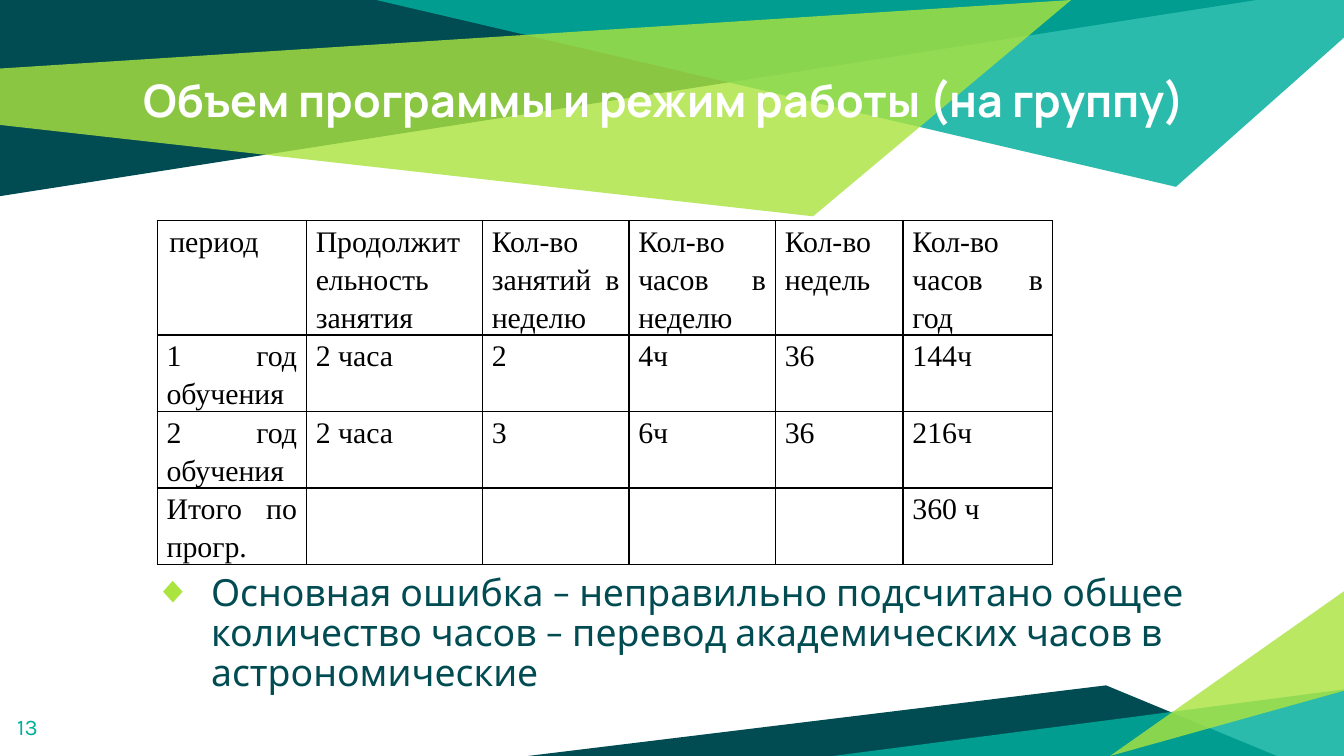
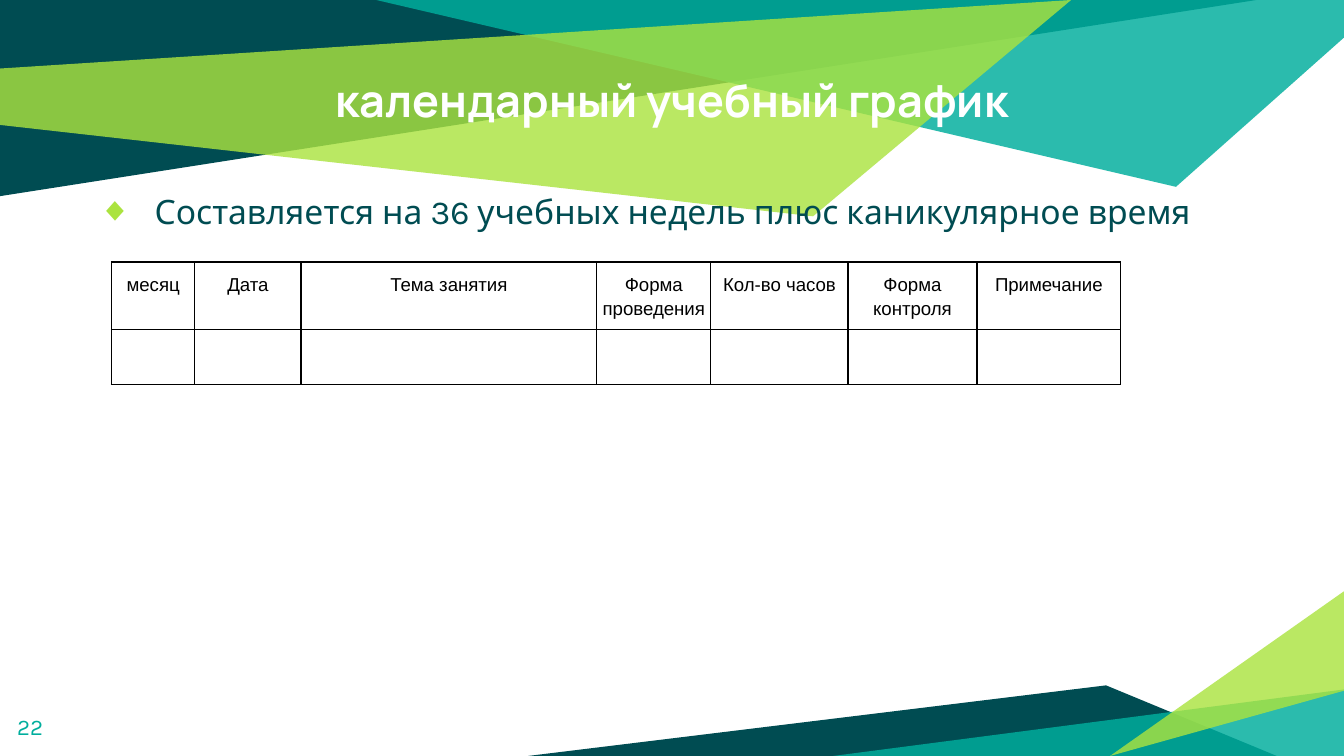
from dataclasses import dataclass

from lxml import etree
from pptx import Presentation
from pptx.dml.color import RGBColor
from pptx.enum.text import MSO_ANCHOR, MSO_AUTO_SIZE, PP_ALIGN
from pptx.oxml.ns import qn
from pptx.util import Inches, Pt

LEFT, CENTER, JUSTIFY = PP_ALIGN.LEFT, PP_ALIGN.CENTER, PP_ALIGN.JUSTIFY
TOP, MIDDLE = MSO_ANCHOR.TOP, MSO_ANCHOR.MIDDLE
NO_AUTOFIT = MSO_AUTO_SIZE.NONE


@dataclass(frozen=True)
class Theme:
    dark: str = "004C52"
    teal: str = "00AE9D"
    lime: str = "ABE33F"
    white: str = "FFFFFF"
    black: str = "000000"
    title_font: str = "Manrope"
    body_font: str = "Karla"
    title_size: int = 24
    number_size: int = 12
    grid_line: float = 0.75
    grid_spacing: float = 1.15


THEME = Theme()
WIDTH, HEIGHT = 10, 10 * 9 / 16

# Shared bands: colour, opacity in percent, corners in inches
BANDS = [
    (THEME.dark, 100, [(0, 0), (0, 1.46), (9.35, 0)]),
    (THEME.teal, 83, [(2.8, 0), (8.75, 1.39), (WIDTH, 0.28), (WIDTH, 0)]),
    (THEME.lime, 81, [(0, 0.51), (0, 0.93), (6.05, 1.61), (7.97, 0)]),
    (THEME.dark, 100, [(3.93, HEIGHT), (9.5, HEIGHT), (8.23, 5.1)]),
    (THEME.teal, 83, [(WIDTH, 5.13), (WIDTH, HEIGHT), (6.2, HEIGHT)]),
    (THEME.lime, 81, [(WIDTH, 5.14), (WIDTH, 4.4), (8.26, HEIGHT)]),
]
TITLE_BOX = (0.97, 0.44, 8.06, 0.94)
NUMBER_BOX = (0.03, 5.19, 0.6, 0.43)

# Content of the slides
SLIDES = [
    {
        "title": "Объем программы и режим работы (на группу)",
        "title_align": LEFT,
        "number": "13",
        "point": "Основная ошибка – неправильно подсчитано общее количество часов"
                 " – перевод академических часов в астрономические",
        "point_box": (0.97, 4.17, 8.06, 1.22),
        "point_size": 20,
        "point_spacing": 0.9,
        "table": {
            "corner": (1.17, 1.64),
            "columns": [1.11, 1.31, 1.09, 1.09, 0.95, 1.11],
            "heights": [0.85, 0.57, 0.57, 0.57],
            "font": "Times New Roman", "size": 16, "align": JUSTIFY,
            "margins": (0.07, 0),
            "first_indent": 0.02,
            "rows": [
                ["период", "Продолжительность занятия", "Кол-во занятий в неделю",
                 "Кол-во часов в неделю", "Кол-во недель", "Кол-во часов в год"],
                ["1 год обучения", "2 часа", "2", "4ч", "36", "144ч"],
                ["2 год обучения", "2 часа", "3", "6ч", "36", "216ч"],
                ["Итого по прогр.", "", "", "", "", "360 ч"],
            ],
        },
    },
    {
        "title": "календарный учебный график",
        "title_align": CENTER,
        "number": "22",
        "point": "Составляется на 36 учебных недель плюс каникулярное время",
        "point_box": (0.55, 1.32, 8.75, 0.6),
        "point_size": 18,
        "point_spacing": 1.0,
        "table": {
            "corner": (0.83, 1.95),
            "columns": [0.62, 0.79, 2.2, 0.85, 1.02, 0.96, 1.07],
            "heights": [0.5, 0.41],
            "font": "Arial", "size": 10, "align": CENTER,
            "margins": (0.04, 0.07),
            "first_indent": 0,
            "rows": [
                ["месяц", "Дата", "Тема занятия", "Форма проведения",
                 "Кол-во часов", "Форма контроля", "Примечание"],
                [""] * 7,
            ],
        },
    },
]


def place(shape, box):
    shape.left, shape.top, shape.width, shape.height = map(Inches, box)


def style_text(paragraph, font, size, color, bold=False):
    for run in paragraph.runs:
        run.font.name, run.font.size, run.font.bold = font, Pt(size), bold
        run.font.color.rgb = RGBColor.from_string(color)


def fill_frame(frame, text, anchor):
    """Put one paragraph in a frame with even margins and return it."""
    frame.text = text
    frame.word_wrap, frame.auto_size = True, NO_AUTOFIT
    frame.vertical_anchor = anchor
    frame.margin_left = frame.margin_right = Inches(0.1)
    frame.margin_top = frame.margin_bottom = Inches(0.1)
    return frame.paragraphs[0]


def add_bands(slide):
    """Draw the bands and move them behind everything on the slide's layout."""
    layout = slide.slide_layout
    for footer in list(layout.placeholders)[2:]:
        layout.shapes.element.remove(footer.element)
    for depth, (color, opacity, corners) in enumerate(BANDS):
        points = [(Inches(x), Inches(y)) for x, y in corners]
        builder = slide.shapes.build_freeform(*points[0])
        builder.add_line_segments(points[1:], close=True)
        band = builder.convert_to_shape()
        band.shadow.inherit = False
        band.line.fill.background()
        band.fill.solid()
        band.fill.fore_color.rgb = RGBColor.from_string(color)
        if opacity < 100:
            tint = band.element.spPr.find(".//" + qn("a:srgbClr"))
            etree.SubElement(tint, qn("a:alpha"), val=str(opacity * 1000))
        layout.shapes.element.insert(2 + depth, band.element)


def add_title(slide, content):
    title = slide.shapes.title
    place(title, TITLE_BOX)
    line = fill_frame(title.text_frame, content["title"], TOP)
    line.alignment = content["title_align"]
    style_text(line, THEME.title_font, THEME.title_size, THEME.white, bold=True)


def add_point(slide, content):
    body = slide.placeholders[1]
    place(body, content["point_box"])
    point = fill_frame(body.text_frame, content["point"], TOP)
    point.space_before = Pt(0)
    point.line_spacing = content["point_spacing"]
    style_text(point, THEME.body_font, content["point_size"], THEME.dark)
    # Diamond bullet with a hanging indent
    props = point._p.get_or_add_pPr()
    props.set("marL", str(Inches(0.5)))
    props.set("indent", str(Inches(-0.42)))
    bullet_color = etree.SubElement(props, qn("a:buClr"))
    etree.SubElement(bullet_color, qn("a:srgbClr"), val=THEME.lime)
    etree.SubElement(props, qn("a:buChar"), char="◆")


def add_number(slide, content):
    box = slide.shapes.add_textbox(*map(Inches, NUMBER_BOX))
    number = fill_frame(box.text_frame, content["number"], MIDDLE)
    style_text(number, THEME.body_font, THEME.number_size, THEME.teal)


def outline_cell(cell):
    props = cell._tc.get_or_add_tcPr()
    for side in ("lnL", "lnR", "lnT", "lnB"):
        edge = etree.SubElement(props, qn("a:" + side), w=str(Pt(THEME.grid_line)))
        paint = etree.SubElement(edge, qn("a:solidFill"))
        etree.SubElement(paint, qn("a:srgbClr"), val=THEME.black)
    cell.fill.background()


def add_schedule(slide, plan):
    rows, columns, heights = plan["rows"], plan["columns"], plan["heights"]
    box = (*plan["corner"], sum(columns), sum(heights))
    grid = slide.shapes.add_table(len(rows), len(columns), *map(Inches, box)).table
    grid.first_row = grid.horz_banding = False
    for column, width in zip(grid.columns, columns):
        column.width = Inches(width)
    for row, height in zip(grid.rows, heights):
        row.height = Inches(height)
    side, edge = map(Inches, plan["margins"])
    for r, texts in enumerate(rows):
        for c, text in enumerate(texts):
            cell = grid.cell(r, c)
            outline_cell(cell)
            if not text:
                continue
            cell.margin_left = cell.margin_right = side
            cell.margin_top = cell.margin_bottom = edge
            cell.text_frame.text = text
            line = cell.text_frame.paragraphs[0]
            line.alignment, line.line_spacing = plan["align"], THEME.grid_spacing
            style_text(line, plan["font"], plan["size"], THEME.black)
    if plan["first_indent"]:
        first = grid.cell(0, 0).text_frame.paragraphs[0]
        first._p.get_or_add_pPr().set("indent", str(Inches(plan["first_indent"])))


def main():
    deck = Presentation()
    deck.slide_width, deck.slide_height = Inches(WIDTH), Inches(HEIGHT)
    layout = deck.slide_layouts[1]
    for index, content in enumerate(SLIDES):
        slide = deck.slides.add_slide(layout)
        if index == 0:
            add_bands(slide)
        add_title(slide, content)
        add_point(slide, content)
        add_number(slide, content)
        add_schedule(slide, content["table"])
    deck.save("out.pptx")


if __name__ == "__main__":
    main()
